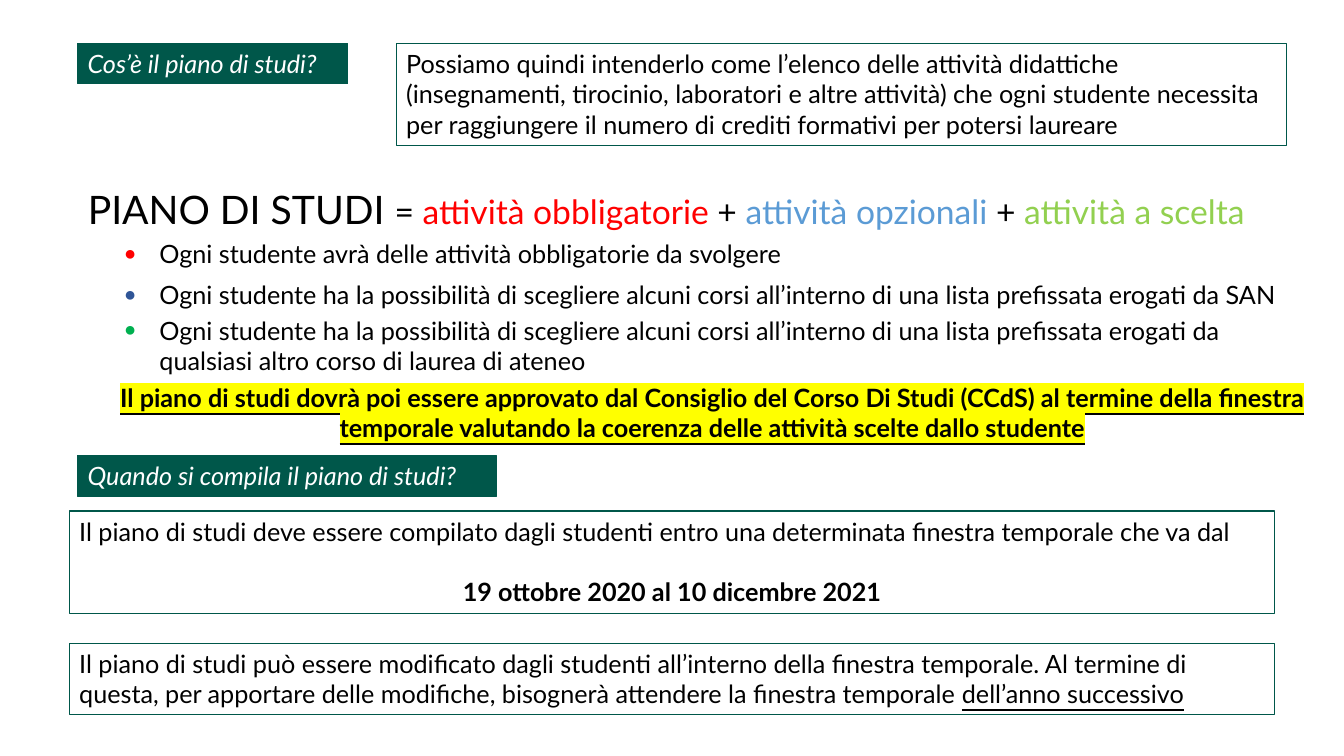
import pptx
import pptx.dml.color
import pptx.enum.text
import pptx.oxml
import pptx.oxml.ns
import pptx.util

Pt = pptx.util.Pt
ALIGN = pptx.enum.text.PP_ALIGN
GREEN = "00574A"
RED = "FF0000"
BLACK = "000000"


def rgb(value):
    return pptx.dml.color.RGBColor.from_string(value)


def element(tag, **attrs):
    e = pptx.oxml.parse_xml(f"<a:{tag} {pptx.oxml.ns.nsdecls('a')}/>")
    for name, value in attrs.items():
        e.set(name, value)
    return e


def add_run(p, text, size=18, color=BLACK, bold=False, italic=False,
            underline=False, highlight=None):
    r = p.add_run()
    r.text = text
    r.font.name = "Lato"
    r.font.size = Pt(size)
    r.font.bold = bold
    r.font.italic = italic
    r.font.underline = underline
    r.font.color.rgb = rgb(color)
    if highlight:
        mark = element("highlight")
        mark.append(element("srgbClr", val=highlight))
        fill = r.font._element.find(pptx.oxml.ns.qn("a:solidFill"))
        fill.addnext(mark)


def prepare_frame(sp):
    tf = sp.text_frame
    tf.word_wrap = True
    tf.auto_size = pptx.enum.text.MSO_AUTO_SIZE.NONE
    tf.vertical_anchor = pptx.enum.text.MSO_ANCHOR.TOP
    return tf


def place(sp, left, top, width, height):
    sp.left, sp.top, sp.width, sp.height = map(Pt, (left, top, width, height))


def add_paragraph(tf, first, align=ALIGN.LEFT, before=0):
    p = tf.paragraphs[0] if first else tf.add_paragraph()
    p.alignment = align
    p.space_before = Pt(before)
    return p


def add_box(s, box, text, line=GREEN, fill=None, align=ALIGN.LEFT, **fmt):
    """Add a text box with one formatted paragraph and return its frame."""
    sp = s.shapes.add_textbox(*map(Pt, box))
    if line:
        sp.line.color.rgb = rgb(line)
        sp.line.width = Pt(0.75)
    if fill:
        sp.fill.solid()
        sp.fill.fore_color.rgb = rgb(fill)
    tf = prepare_frame(sp)
    add_run(add_paragraph(tf, True, align), text, **fmt)
    return tf


def add_label(s, box, text):
    add_box(s, box, text, fill=GREEN, color="FFFFFF", italic=True)


def fill_title(sp, box, parts):
    place(sp, *box)
    p = add_paragraph(prepare_frame(sp), True)
    for text, size, color in parts:
        add_run(p, text, size=size, color=color)


def fill_list(sp, box, items):
    """Write items of (text, bullet colour, space before)."""
    place(sp, *box)
    tf = prepare_frame(sp)
    for i, (text, color, before) in enumerate(items):
        p = add_paragraph(tf, i == 0, before=before)
        pPr = p._p.get_or_add_pPr()
        pPr.set("marL", str(Pt(25.2)))
        pPr.set("indent", str(-Pt(25.2)))
        bullet_color = element("buClr")
        bullet_color.append(element("srgbClr", val=color))
        pPr.append(bullet_color)
        pPr.append(element("buSzPct", val="80000"))
        pPr.append(element("buFont", typeface="Arial"))
        pPr.append(element("buChar", char="●"))
        add_run(p, text)


def main():
    prs = pptx.Presentation()
    prs.slide_width, prs.slide_height = Pt(960), Pt(540)
    s = prs.slides.add_slide(prs.slide_layouts[1])
    title, body = s.placeholders

    add_label(s, (55.5, 31, 193, 29), "Cos’è il piano di studi?")
    add_box(s, (283, 31, 636, 73),
            "Possiamo quindi intenderlo come l’elenco delle attività didattiche "
            "(insegnamenti, tirocinio, laboratori e altre attività) che ogni "
            "studente necessita per raggiungere il numero di crediti formativi "
            "per potersi laureare")

    fill_title(title, (55.5, 129, 865, 41), [
        ("PIANO DI STUDI ", 28, BLACK),
        ("= ", 24, BLACK),
        ("attività obbligatorie ", 24, RED),
        ("+ ", 24, BLACK),
        ("attività opzionali ", 24, "5B9BD5"),
        ("+ ", 24, BLACK),
        ("attività a scelta", 24, "92D050"),
    ])
    fill_list(body, (81.5, 166.5, 851, 105.5), [
        ("Ogni studente avrà delle attività obbligatorie da svolgere", RED, 0),
        ("Ogni studente ha la possibilità di scegliere alcuni corsi all’interno "
         "di una lista prefissata erogati da SAN", "2F5597", 8),
        ("Ogni studente ha la possibilità di scegliere alcuni corsi all’interno "
         "di una lista prefissata erogati da qualsiasi altro corso di laurea "
         "di ateneo", "00B050", 3.6),
    ])
    add_box(s, (55.5, 269.5, 906.5, 51),
            "Il piano di studi dovrà poi essere approvato dal Consiglio del "
            "Corso Di Studi (CCdS) al termine della finestra temporale "
            "valutando la coerenza delle attività scelte dallo studente",
            line=None, align=ALIGN.CENTER, bold=True, underline=True,
            highlight="FFFF00")

    add_label(s, (55.5, 325.5, 299, 29), "Quando si compila il piano di studi?")
    tf = add_box(s, (49.5, 365, 861, 73),
                 "Il piano di studi deve essere compilato dagli studenti entro "
                 "una determinata finestra temporale che va dal")
    add_run(add_paragraph(tf, False, ALIGN.CENTER, before=21.6),
            "19 ottobre 2020 al 10 dicembre 2021", bold=True)

    tf = add_box(s, (49.5, 459.5, 861, 51),
                 "Il piano di studi può essere modificato dagli studenti "
                 "all’interno della finestra temporale. Al termine di")
    p = add_paragraph(tf, False)
    add_run(p, "questa, per apportare delle modifiche, bisognerà attendere la "
               "finestra temporale ")
    add_run(p, "dell’anno successivo", underline=True)

    prs.save("out.pptx")


if __name__ == "__main__":
    main()
